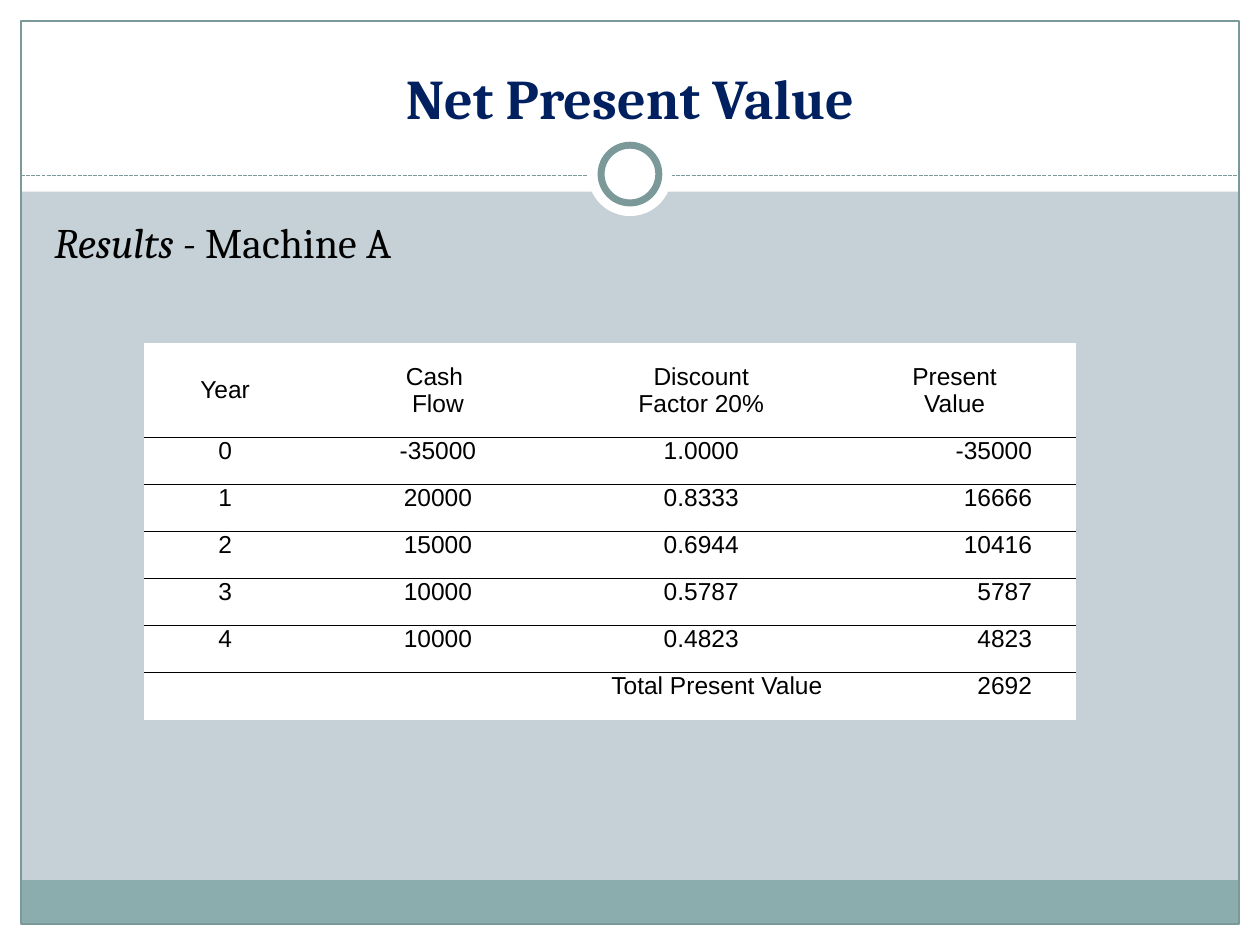
from dataclasses import dataclass
from typing import Optional

from lxml.etree import SubElement
from pptx import Presentation
from pptx.dml.color import RGBColor
from pptx.enum.dml import MSO_LINE_DASH_STYLE as Dash
from pptx.enum.shapes import MSO_CONNECTOR as Connector
from pptx.enum.shapes import MSO_SHAPE as Preset
from pptx.enum.text import MSO_ANCHOR as Anchor
from pptx.enum.text import PP_ALIGN as Align
from pptx.oxml.ns import qn
from pptx.slide import Slide
from pptx.util import Pt

WHITE = RGBColor(0xFF, 0xFF, 0xFF)
BLACK = RGBColor(0x00, 0x00, 0x00)
NAVY = RGBColor(0x00, 0x20, 0x60)
MIST = RGBColor(0xC5, 0xD1, 0xD7)
TEAL = RGBColor(0x8C, 0xAD, 0xAE)
SLATE = RGBColor(0x7C, 0x99, 0x9A)

WIDTH, HEIGHT = 720, 540
MARGIN = 12
NO_STYLE = "{2D5ABB26-0587-4C30-8999-92F81FD0307C}"


@dataclass(frozen=True)
class Panel:
    left: float
    top: float
    width: float
    height: float
    fill: Optional[RGBColor] = WHITE
    preset: Preset = Preset.RECTANGLE
    line_width: float = 0


@dataclass(frozen=True)
class Span:
    text: str
    font: str
    size: float
    color: RGBColor = BLACK
    bold: bool = False
    italic: bool = False


@dataclass(frozen=True)
class Column:
    heading: str
    width: float
    values: tuple[str, ...]
    align: Align = Align.CENTER
    right_inset: float = 6


PANELS = (
    Panel(0, HEIGHT - MARGIN, WIDTH, MARGIN),
    Panel(0, 0, WIDTH, 109.5),
    Panel(0, 0, MARGIN, HEIGHT),
    Panel(WIDTH - MARGIN, 0, MARGIN, HEIGHT),
    Panel(MARGIN, 503, WIDTH - 2 * MARGIN, 25, TEAL),
    Panel(MARGIN, MARGIN, WIDTH - 2 * MARGIN, HEIGHT - 2 * MARGIN, None, line_width=0.75),
)
RINGS = (
    Panel(336, 75.5, 48, 48, WHITE, Preset.OVAL),
    Panel(343.5, 83, 33, 33, WHITE, Preset.OVAL, 4),
)
COLUMNS = (
    Column("Year", 92.75, ("0", "1", "2", "3", "4")),
    Column("Cash \nFlow", 150.5, ("-35000", "20000", "15000", "10000", "10000")),
    Column("Discount\nFactor 20%", 150.5, ("1.0000", "0.8333", "0.6944", "0.5787", "0.4823")),
    Column("Present\nValue", 139, ("-35000", "16666", "10416", "5787", "4823"), Align.RIGHT, 25.25),
)
HEADER_HEIGHT, ROW_HEIGHT = 53.75, 26.9
TOTAL_LABEL, TOTAL_VALUE = "Total Present Value", "2692"


def add_panel(page: Slide, panel: Panel) -> None:
    shape = page.shapes.add_shape(
        panel.preset, Pt(panel.left), Pt(panel.top), Pt(panel.width), Pt(panel.height)
    )
    shape.shadow.inherit = False
    if panel.fill is None:
        shape.fill.background()
    else:
        shape.fill.solid()
        shape.fill.fore_color.rgb = panel.fill
    if panel.line_width:
        shape.line.color.rgb = SLATE
        shape.line.width = Pt(panel.line_width)
    else:
        shape.line.fill.background()


def add_divider(page: Slide, top: float) -> None:
    divider = page.shapes.add_connector(
        Connector.STRAIGHT, Pt(MARGIN), Pt(top), Pt(WIDTH - MARGIN), Pt(top)
    )
    divider.line.color.rgb = SLATE
    divider.line.width = Pt(0.75)
    divider.line.dash_style = Dash.SQUARE_DOT
    SubElement(divider._element.spPr, qn("a:effectLst"))


def add_span(para, span: Span) -> None:
    run = para.add_run()
    run.text = span.text
    font = run.font
    font.name, font.size = span.font, Pt(span.size)
    font.bold, font.italic = span.bold, span.italic
    font.color.rgb = span.color


def add_text(page: Slide, left: float, top: float, width: float, height: float,
             spans: tuple[Span, ...], align: Align, anchor: Anchor, before: float = 0) -> None:
    box = page.shapes.add_textbox(Pt(left), Pt(top), Pt(width), Pt(height))
    frame = box.text_frame
    frame.word_wrap = True
    frame.vertical_anchor = anchor
    para = frame.paragraphs[0]
    para.alignment = align
    para.space_before = Pt(before)
    for span in spans:
        add_span(para, span)


def add_rule(cell, side: str) -> None:
    properties = cell._tc.get_or_add_tcPr()
    rule = SubElement(properties, qn(f"a:{side}"), w=str(Pt(1)))
    SubElement(SubElement(rule, qn("a:solidFill")), qn("a:srgbClr"), val=str(BLACK))


def fill_cell(cell, text: str, align: Align, anchor: Anchor, right_inset: float = 6) -> None:
    cell.fill.solid()
    cell.fill.fore_color.rgb = WHITE
    cell.margin_left, cell.margin_right = Pt(6), Pt(right_inset)
    cell.margin_top = cell.margin_bottom = Pt(0)
    cell.vertical_anchor = anchor
    frame = cell.text_frame
    for index, line in enumerate(text.split("\n")):
        para = frame.add_paragraph() if index else frame.paragraphs[0]
        para.alignment = align
        add_span(para, Span(line, "Arial", 14))


def add_cash_table(page: Slide, left: float, top: float) -> None:
    row_count = len(COLUMNS[0].values) + 2
    last = row_count - 1
    width = sum(column.width for column in COLUMNS)
    height = HEADER_HEIGHT + last * ROW_HEIGHT
    table = page.shapes.add_table(
        row_count, len(COLUMNS), Pt(left), Pt(top), Pt(width), Pt(height)
    ).table
    table.first_row = table.horz_banding = False
    table._tbl.tblPr.find(qn("a:tableStyleId")).text = NO_STYLE
    for index, row in enumerate(table.rows):
        row.height = Pt(ROW_HEIGHT if index else HEADER_HEIGHT)
        for cell in row.cells:
            if index:
                add_rule(cell, "lnT")
            if index < last:
                add_rule(cell, "lnB")

    for index, column in enumerate(COLUMNS):
        table.columns[index].width = Pt(column.width)
        fill_cell(table.cell(0, index), column.heading, Align.CENTER, Anchor.MIDDLE)
        for row, value in enumerate(column.values, start=1):
            fill_cell(table.cell(row, index), value, column.align, Anchor.TOP, column.right_inset)

    label = table.cell(last, 0)
    label.merge(table.cell(last, 2))
    fill_cell(label, TOTAL_LABEL, Align.RIGHT, Anchor.TOP)
    fill_cell(table.cell(last, 3), TOTAL_VALUE, Align.RIGHT, Anchor.TOP, COLUMNS[3].right_inset)


def main() -> None:
    deck = Presentation()
    deck.slide_width, deck.slide_height = Pt(WIDTH), Pt(HEIGHT)
    page = deck.slides.add_slide(deck.slide_layouts[6])
    page.background.fill.solid()
    page.background.fill.fore_color.rgb = MIST

    for panel in PANELS:
        add_panel(page, panel)
    add_divider(page, 100.5)
    for ring in RINGS:
        add_panel(page, ring)

    title = (Span("Net Present Value", "Cambria", 32, NAVY, bold=True),)
    add_text(page, 24, 18, 672, 60, title, Align.CENTER, Anchor.BOTTOM)
    subtitle = (
        Span("Results - ", "Cambria", 24, italic=True),
        Span("Machine A", "Cambria", 24),
    )
    add_text(page, 24, 120, 660, 360, subtitle, Align.LEFT, Anchor.TOP, before=4.8)
    add_cash_table(page, 82.25, 196.25)
    deck.save("out.pptx")


if __name__ == "__main__":
    main()
